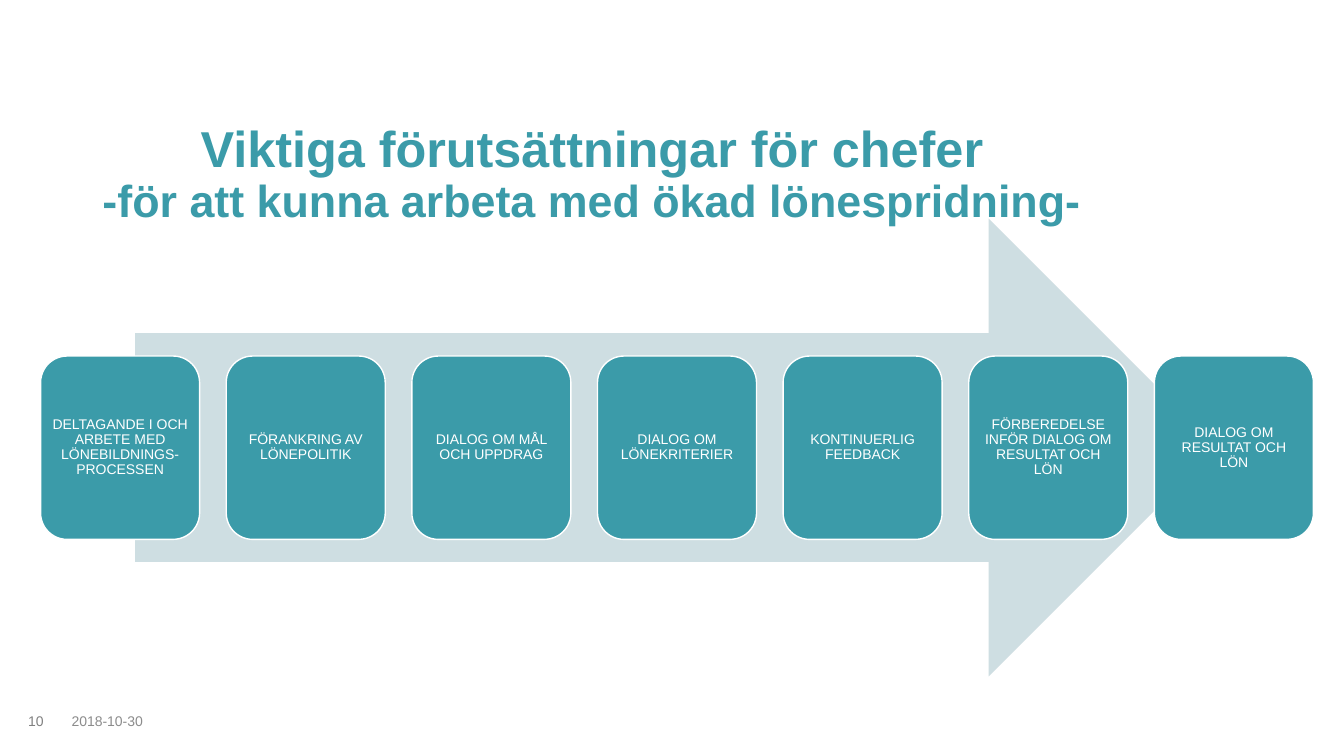
from pptx import Presentation
from pptx.dml.color import RGBColor
from pptx.enum.shapes import MSO_SHAPE
from pptx.enum.text import MSO_ANCHOR, PP_ALIGN
from pptx.util import Pt

TITLE = [
    ("Viktiga förutsättningar för chefer", 36),
    ("-för att kunna arbeta med ökad lönespridning-", 32),
]
STEPS = [
    "DELTAGANDE I OCH ARBETE MED LÖNEBILDNINGS-PROCESSEN",
    "FÖRANKRING AV LÖNEPOLITIK",
    "DIALOG OM MÅL OCH UPPDRAG",
    "DIALOG OM LÖNEKRITERIER",
    "KONTINUERLIG FEEDBACK",
    "FÖRBEREDELSE INFÖR DIALOG OM RESULTAT OCH LÖN",
    "DIALOG OM RESULTAT OCH LÖN",
]
DATE = "2018-10-30"
PAGE_NUMBER = "10"

TEAL, PALE, WHITE = "3B9BA9", "CEDEE2", "FFFFFF"
STEP_LEFT, STEP_TOP, STEP_WIDTH, STEP_HEIGHT = 29, 254.3, 113.6, 131
STEP_PITCH = 132.6


def color(value):
    return RGBColor.from_string(value)


def write(shape, lines, fill=TEAL, bold=False, align=PP_ALIGN.CENTER,
          anchor=MSO_ANCHOR.MIDDLE, spacing=1.0, inset=None):
    """Put (text, size) lines into a shape, one paragraph each."""
    frame = shape.text_frame
    frame.word_wrap = True
    frame.vertical_anchor = anchor
    if inset is not None:
        frame.margin_left = frame.margin_right = Pt(inset)
        frame.margin_top = frame.margin_bottom = Pt(inset)
    for index, (text, size) in enumerate(lines):
        para = frame.add_paragraph() if index else frame.paragraphs[0]
        para.alignment = align
        para.line_spacing = spacing
        span = para.add_run()
        span.text = text
        span.font.name = "Arial"
        span.font.size = Pt(size)
        span.font.bold = bold
        span.font.color.rgb = color(fill)


def add_block(page, kind, left, top, width, height, fill, line=None):
    block = page.shapes.add_shape(kind, Pt(left), Pt(top), Pt(width), Pt(height))
    block.shadow.inherit = False
    block.fill.solid()
    block.fill.fore_color.rgb = color(fill)
    if line:
        block.line.color.rgb = color(line)
        block.line.width = Pt(1)
    else:
        block.line.fill.background()
    return block


def add_text(page, left, top, width, height, lines, **style):
    box = page.shapes.add_textbox(Pt(left), Pt(top), Pt(width), Pt(height))
    write(box, lines, **style)


def main():
    deck = Presentation()
    deck.slide_width, deck.slide_height = Pt(960), Pt(540)
    page = deck.slides.add_slide(deck.slide_layouts[6])

    add_block(page, MSO_SHAPE.RIGHT_ARROW, 96.5, 156.2, 773.3, 327, PALE)
    for index, step in enumerate(STEPS):
        card = add_block(page, MSO_SHAPE.ROUNDED_RECTANGLE,
                         STEP_LEFT + index * STEP_PITCH, STEP_TOP,
                         STEP_WIDTH, STEP_HEIGHT, TEAL, line=WHITE)
        write(card, [(step, 10)], fill=WHITE, spacing=0.9, inset=3)

    add_text(page, 44, 500.4, 70, 28.8, [(DATE, 10)],
             fill="8C8C8C", align=PP_ALIGN.LEFT)
    add_text(page, -0.7, 500.4, 38.9, 28.8, [(PAGE_NUMBER, 10)],
             fill="808080", align=PP_ALIGN.RIGHT)
    add_text(page, 45, 85, 756, 97, TITLE, bold=True,
             anchor=MSO_ANCHOR.TOP, spacing=0.9)
    deck.save("out.pptx")


if __name__ == "__main__":
    main()
